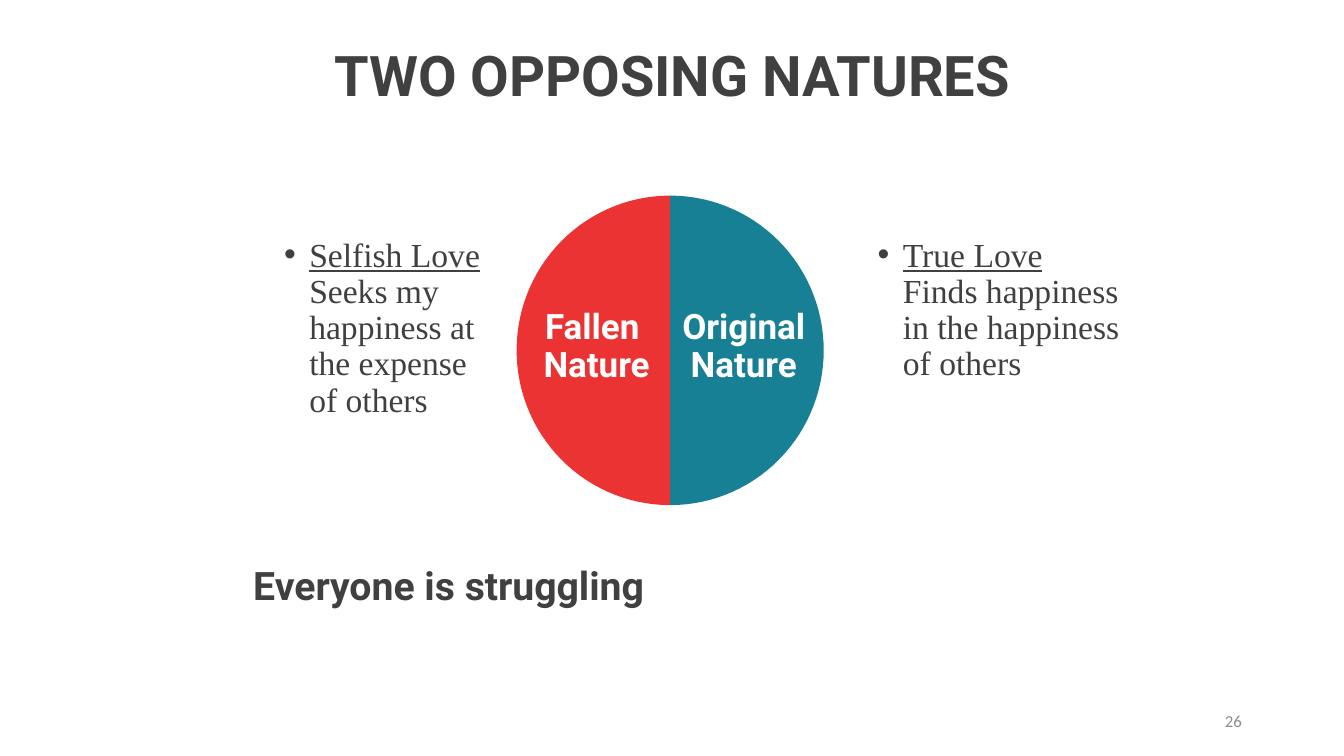
from math import cos, pi, sin

from lxml.etree import SubElement
from pptx import Presentation
from pptx.dml.color import RGBColor
from pptx.enum.text import MSO_ANCHOR, PP_ALIGN
from pptx.oxml.ns import qn
from pptx.util import Cm, Pt


def color(value):
    return RGBColor.from_string(value)


class NatureSlide:
    HEADING = "Roboto"
    BODY = "Times New Roman"
    INK = "404040"
    WHITE = "FFFFFF"
    GREY = "8C8C8C"
    FALLEN = "EA3332"
    ORIGINAL = "178095"

    def __init__(self, prs):
        self.s = prs.slides.add_slide(prs.slide_layouts[6])

    def half(self, x, y, rx, ry, side, fill):
        steps = 60
        points = [
            (Cm(x + side * rx * sin(pi * i / steps)), Cm(y - ry * cos(pi * i / steps)))
            for i in range(steps + 1)
        ]
        builder = self.s.shapes.build_freeform(*points[0], scale=1.0)
        builder.add_line_segments(points[1:], close=True)
        sp = builder.convert_to_shape()
        sp.shadow.inherit = False
        sp.fill.solid()
        sp.fill.fore_color.rgb = color(fill)
        sp.line.fill.background()

    def text(self, box, text, size, font=HEADING, fill=INK, bold=True,
             align=PP_ALIGN.CENTER, anchor=MSO_ANCHOR.TOP,
             insets=(0.25, 0.13, 0.25, 0.13), spacing=0.9):
        sp = self.s.shapes.add_textbox(*(Cm(v) for v in box))
        tf = sp.text_frame
        tf.word_wrap = True
        tf.vertical_anchor = anchor
        tf.margin_left, tf.margin_top, tf.margin_right, tf.margin_bottom = (
            Cm(v) for v in insets)
        tf.text = text
        p = tf.paragraphs[0]
        p.alignment = align
        p.line_spacing = spacing
        for r in p.runs:
            r.font.name = font
            r.font.size = Pt(size)
            r.font.bold = bold
            r.font.color.rgb = color(fill)
        return p

    def bullet(self, box, heading, detail):
        p = self.text(box, f"{heading}\v{detail}", 24, font=self.BODY,
                      bold=False, align=PP_ALIGN.LEFT)
        p.runs[0].font.underline = True
        pPr = p._p.get_or_add_pPr()
        pPr.set("marL", str(Cm(0.635)))
        pPr.set("indent", str(-Cm(0.635)))
        SubElement(pPr, qn("a:buFont")).set("typeface", "Arial")
        SubElement(pPr, qn("a:buChar")).set("char", "•")

    def label(self, x, text, left):
        self.text((x, 7.7, 4.27, 2.15), text, 25, fill=self.WHITE,
                  insets=(left, 0.1, 0.1, 0.13))


def main():
    prs = Presentation()
    prs.slide_width, prs.slide_height = Cm(33.87), Cm(19.05)
    s = NatureSlide(prs)
    for side, fill in ((-1, s.FALLEN), (1, s.ORIGINAL)):
        s.half(16.89, 8.83, 3.87, 3.9, side, fill)
    s.label(16.51, "Original Nature", 0.3)
    s.label(12.95, "Fallen \vNature", 0)
    s.text((4.24, 0.36, 25.4, 3.02), "TWO OPPOSING NATURES", 40,
           anchor=MSO_ANCHOR.MIDDLE, spacing=1.0)
    s.bullet((6.91, 5.87, 5.54, 5.82), "Selfish Love",
             "Seeks my happiness at the expense of others")
    s.bullet((21.87, 5.87, 6.73, 4.32), "True Love",
             "Finds happiness in the happiness of others")
    s.text((0, 14.15, 22.86, 2.57), "Everyone is struggling ", 28)
    s.text((23.93, 17.65, 7.62, 1.02), "26", 12, font="Calibri", fill=s.GREY,
           bold=False, align=PP_ALIGN.RIGHT, anchor=MSO_ANCHOR.MIDDLE, spacing=1.0)
    prs.save("out.pptx")


if __name__ == "__main__":
    main()
